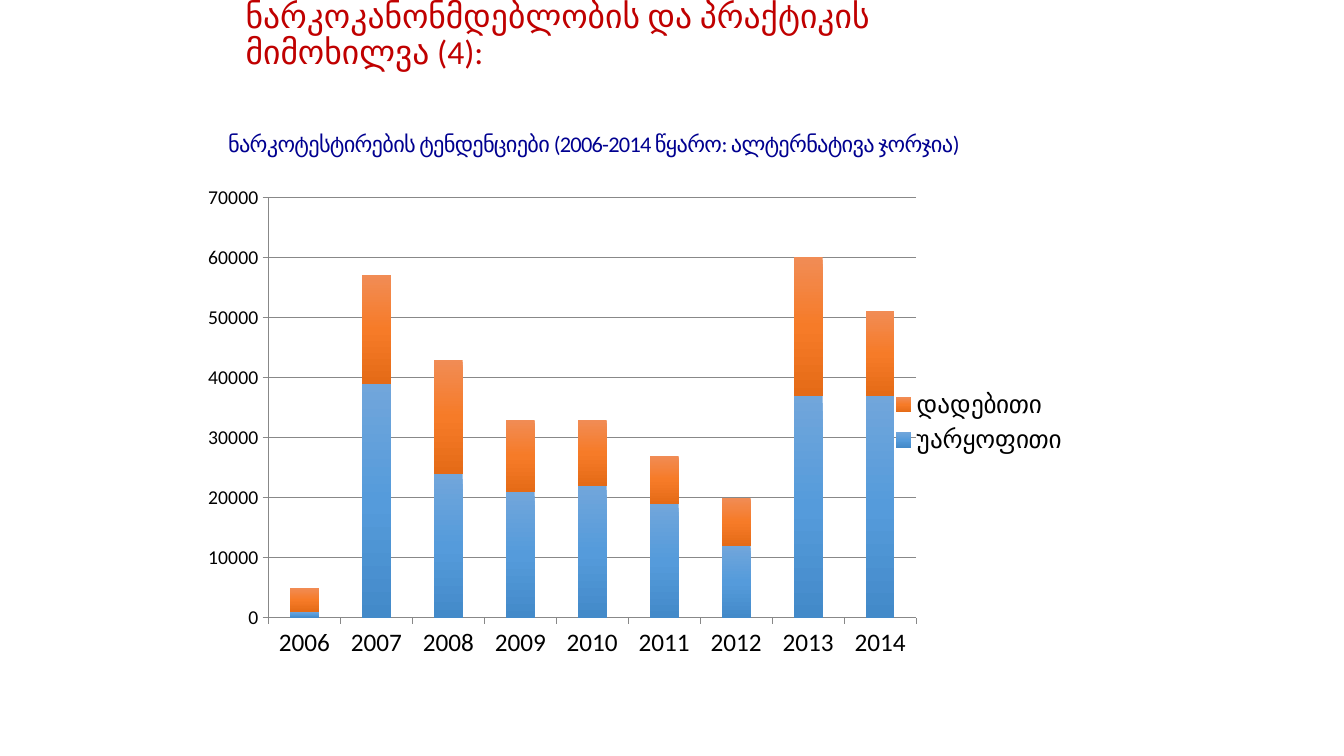
from copy import deepcopy

from pptx import Presentation
from pptx.chart.data import CategoryChartData
from pptx.dml.color import RGBColor
from pptx.enum.chart import XL_CHART_TYPE as ChartType, XL_LEGEND_POSITION as LegendPosition
from pptx.enum.chart import XL_TICK_MARK as TickMark
from pptx.enum.text import MSO_ANCHOR as Anchor, PP_ALIGN as Align
from pptx.oxml import parse_xml
from pptx.oxml.ns import nsdecls
from pptx.util import Cm, Pt

FONT = "Calibri"
RED = RGBColor(0xC0, 0x00, 0x00)
NAVY = RGBColor(0x00, 0x00, 0x90)
BLACK = RGBColor(0x00, 0x00, 0x00)
GRAY = RGBColor(0x88, 0x88, 0x88)
# Top, middle and bottom of each bar gradient
BLUES = [RGBColor(0x71, 0xA6, 0xDB), RGBColor(0x55, 0x9B, 0xDB), RGBColor(0x43, 0x8A, 0xC9)]
ORANGES = [RGBColor(0xF1, 0x8C, 0x55), RGBColor(0xF6, 0x7B, 0x28), RGBColor(0xE5, 0x6B, 0x17)]

prs = Presentation()
prs.slide_width, prs.slide_height = Cm(33.87), Cm(19.05)
slide = prs.slides.add_slide(prs.slide_layouts[6])


def add_text(text, left, top, width, height, *, size, color, anchor, line_spacing,
             align=Align.LEFT, tracking=0):
    box = slide.shapes.add_textbox(Cm(left), Cm(top), Cm(width), Cm(height))
    frame = box.text_frame
    frame.word_wrap = True
    frame.vertical_anchor = anchor
    paragraph = frame.paragraphs[0]
    paragraph.alignment = align
    paragraph.line_spacing = line_spacing
    run = paragraph.add_run()
    run.text = text
    run.font.name, run.font.size = FONT, Pt(size)
    run.font.color.rgb = color
    if tracking:
        run.font._element.set("spc", str(tracking))


def add_layout(parent, position, **fractions):
    """Place a chart part by fractions of the chart area."""
    modes = {"xMode": "edge", "yMode": "edge"}
    values = "".join(f'<c:{tag} val="{val}"/>' for tag, val in (modes | fractions).items())
    target = '<c:layoutTarget val="inner"/>' if parent.tag.endswith("plotArea") else ""
    for layout in parent.xpath("c:layout"):
        parent.remove(layout)
    parent.insert(position, parse_xml(
        f'<c:layout {nsdecls("c")}><c:manualLayout>{target}{values}</c:manualLayout></c:layout>'))


# Headings
add_text("ნარკოკანონმდებლობის და პრაქტიკის მიმოხილვა (4):", 5.94, -0.48, 20.7, 2.77,
         size=24, color=RED, anchor=Anchor.MIDDLE, line_spacing=0.9)
add_text("ნარკოტესტირების ტენდენციები (2006-2014 წყარო: ალტერნატივა ჯორჯია)",
         4.88, 3.1, 20.19, 0.97, size=16, color=NAVY, anchor=Anchor.BOTTOM,
         line_spacing=0.7, align=Align.CENTER, tracking=-50)

# Drug test results by year
results = CategoryChartData()
results.categories = [str(year) for year in range(2006, 2015)]
results.add_series("უარყოფითი", [1000, 39000, 24000, 21000, 22000, 19000, 12000, 37000, 37000])
results.add_series("დადებითი", [4000, 18000, 19000, 12000, 11000, 8000, 8000, 23000, 14000])
chart = slide.shapes.add_chart(ChartType.COLUMN_STACKED, Cm(4.32), Cm(4.42),
                               Cm(22.86), Cm(12.57), results).chart
chart.has_title = False
chart.font.name, chart.font.size = FONT, Pt(18)
chart.font.color.rgb = BLACK

# Bars
bars = chart.plots[0]
bars.gap_width, bars.overlap = 150, 100
bars.vary_by_categories = False
for series, shades in zip(bars.series, (BLUES, ORANGES)):
    fill = series.format.fill
    fill.gradient()
    fill.gradient_angle = 270
    stop_list = series._element.xpath("c:spPr/a:gradFill/a:gsLst")[0]
    stop_list.insert(1, deepcopy(stop_list[0]))
    for stop, position, shade in zip(fill.gradient_stops, (0, 0.5, 1), shades):
        stop.position = position
        stop.color.rgb = shade

# Axes
years, counts = chart.category_axis, chart.value_axis
for axis in (years, counts):
    axis.major_tick_mark = TickMark.OUTSIDE
    axis.minor_tick_mark = TickMark.NONE
    axis.format.line.color.rgb = GRAY
    axis.format.line.width = Pt(0.75)
counts.minimum_scale, counts.maximum_scale, counts.major_unit = 0, 70000, 10000
counts.tick_labels.font.size = Pt(14)
counts.has_major_gridlines = True
counts.major_gridlines.format.line.color.rgb = GRAY
counts.major_gridlines.format.line.width = Pt(0.75)

# Legend and plot placement
chart.has_legend = True
chart.legend.position = LegendPosition.RIGHT
chart.legend.include_in_layout = False
add_layout(chart.legend._element, 1, x=0.79, y=0.42, w=0.2, h=0.15)
add_layout(chart._chartSpace.chart.plotArea, 0, x=0.107, y=0.044, w=0.714, h=0.843)

prs.save("out.pptx")
